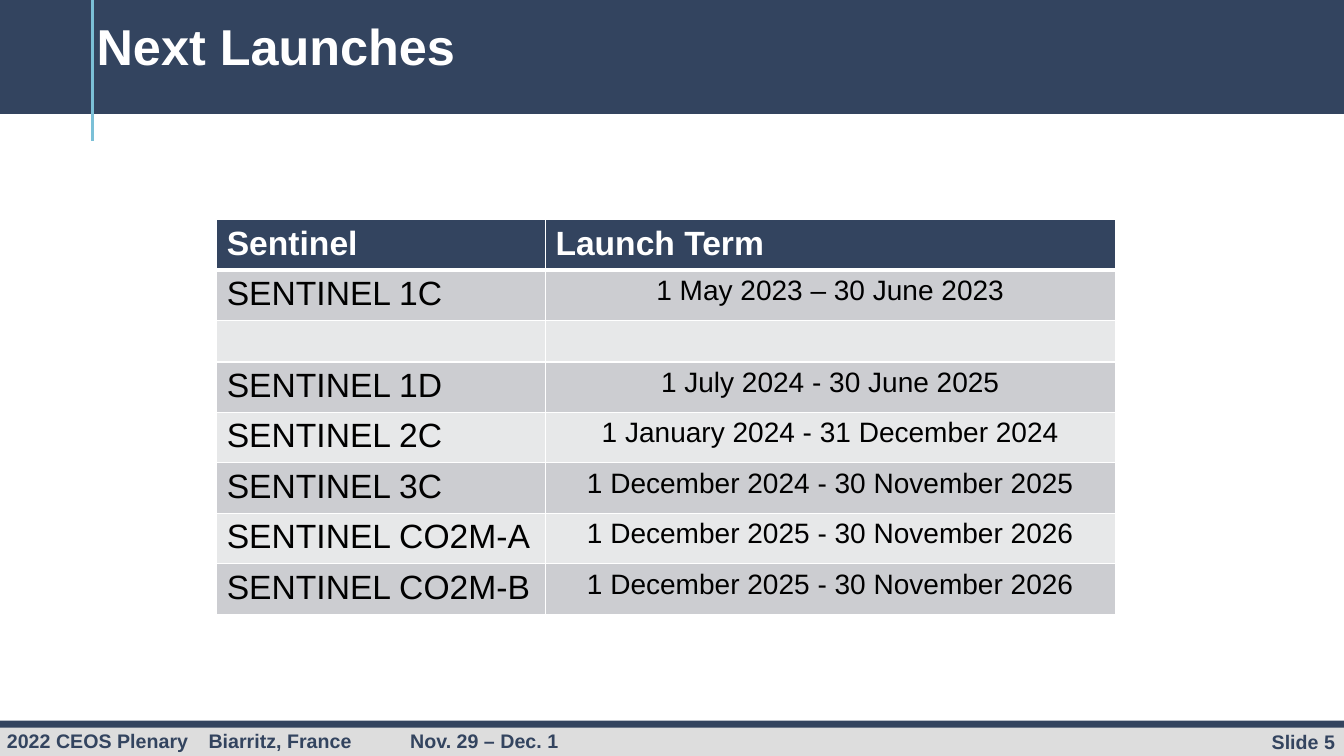
"""Build the Next Launches slide with its header, launch table and footer."""
from dataclasses import dataclass

from lxml import etree
from pptx import Presentation
from pptx import util as u
from pptx.dml import color
from pptx.enum import shapes, text
from pptx.oxml import ns

PX = 9144
COLORS = {
    "navy": "33445F",
    "grey": "DDDDDD",
    "sky": "7BC0D7",
    "white": "FFFFFF",
    "black": "000000",
    "dark_band": "CCCDD1",
    "light_band": "E7E8E9",
}
LEFT, CENTER, RIGHT = text.PP_ALIGN.LEFT, text.PP_ALIGN.CENTER, text.PP_ALIGN.RIGHT


@dataclass(frozen=True)
class Bar:
    """A plain filled strip."""
    area: tuple[int, int, int, int]
    fill: str


@dataclass(frozen=True)
class Label:
    """A line of text with its look."""
    words: str
    size: int
    color: str
    bold: bool = True
    align: text.PP_ALIGN = LEFT


@dataclass(frozen=True)
class Caption:
    """A text box that holds one label."""
    area: tuple[int, int, int, int]
    label: Label
    anchor: text.MSO_ANCHOR = text.MSO_ANCHOR.TOP
    bottom: int = 5
    tabs: tuple[int, ...] = ()


BARS = (
    Bar((0, 0, 1333, 113), "navy"),
    Bar((0, 719, 1334, 31), "grey"),
    Bar((0, 715, 1334, 7), "navy"),
)
CAPTIONS = (
    Caption((86, -11, 1150, 86), Label("Next Launches", 36, "white"),
            text.MSO_ANCHOR.BOTTOM, 0),
    Caption((-3, 718, 705, 128),
            Label("2022 CEOS Plenary\tBiarritz, France\tNov. 29 – Dec. 1", 14, "navy"),
            tabs=(200, 400)),
    Caption((1123, 719, 211, 34), Label("Slide 5", 14, "navy", align=RIGHT)),
)
LAUNCHES = (
    ("SENTINEL 1C", "1 May 2023 – 30 June 2023"),
    ("", ""),
    ("SENTINEL 1D", "1 July 2024 - 30 June 2025"),
    ("SENTINEL 2C", "1 January 2024 - 31 December 2024"),
    ("SENTINEL 3C", "1 December 2024 - 30 November 2025"),
    ("SENTINEL CO2M-A", "1 December 2025 - 30 November 2026"),
    ("SENTINEL CO2M-B", "1 December 2025 - 30 November 2026"),
)
HEADINGS = ("Sentinel", "Launch Term")
COLUMNS = (326, 565)
ROW_HEIGHT = 41


def px(*lengths: int) -> list[int]:
    """Turn px lengths into EMU."""
    return [length * PX for length in lengths]


def rgb(name: str) -> color.RGBColor:
    """Look up a named colour."""
    return color.RGBColor.from_string(COLORS[name])


def write(para, label: Label) -> None:
    """Put a label into a paragraph."""
    para.alignment = label.align
    span = para.add_run()
    span.text = label.words
    formats = {"name": "Arial", "size": u.Pt(label.size), "bold": label.bold}
    for key, value in formats.items():
        setattr(span.font, key, value)
    span.font.color.rgb = rgb(label.color)


def draw_bar(page, bar: Bar) -> None:
    """Draw a filled strip."""
    box = page.shapes.add_shape(shapes.MSO_SHAPE.RECTANGLE, *px(*bar.area))
    box.shadow.inherit = False
    box.fill.solid()
    box.fill.fore_color.rgb = rgb(bar.fill)
    box.line.fill.background()


def draw_rule(page) -> None:
    """Draw the vertical accent line beside the title."""
    rule = page.shapes.add_connector(shapes.MSO_CONNECTOR.STRAIGHT, *px(92, 0, 92, 140))
    rule.line.color.rgb = rgb("sky")
    rule.line.width = u.Pt(2.25)
    etree.SubElement(rule._element.spPr, ns.qn("a:effectLst"))


def draw_caption(page, caption: Caption) -> None:
    """Draw a text box with one label."""
    frame = page.shapes.add_textbox(*px(*caption.area)).text_frame
    formats = {
        "word_wrap": True,
        "vertical_anchor": caption.anchor,
        "margin_bottom": caption.bottom * PX,
    }
    for key, value in formats.items():
        setattr(frame, key, value)
    para = frame.paragraphs[0]
    if caption.tabs:
        stops = etree.SubElement(para._p.get_or_add_pPr(), ns.qn("a:tabLst"))
        for stop in px(*caption.tabs):
            etree.SubElement(stops, ns.qn("a:tab"), pos=str(stop), algn="l")
    write(para, caption.label)


def fill_cell(cell, label: Label, fill: str, row: int) -> None:
    """Give a cell its white borders, fill and text."""
    props = cell._tc.get_or_add_tcPr()
    widths = {"L": 1, "R": 1, "T": 3 if row == 1 else 1, "B": 3 if row == 0 else 1}
    for side, width in widths.items():
        edge = etree.SubElement(props, ns.qn(f"a:ln{side}"), w=str(u.Pt(width)))
        paint = etree.SubElement(edge, ns.qn("a:solidFill"))
        etree.SubElement(paint, ns.qn("a:srgbClr"), val=COLORS["white"])
    cell.fill.solid()
    cell.fill.fore_color.rgb = rgb(fill)
    if label.words:
        write(cell.text_frame.paragraphs[0], label)


def draw_table(page) -> None:
    """Draw the launch table."""
    rows = (HEADINGS, *LAUNCHES)
    area = px(215, 218, sum(COLUMNS), ROW_HEIGHT * len(rows))
    table = page.shapes.add_table(len(rows), len(COLUMNS), *area).table
    for column, width in zip(table.columns, px(*COLUMNS)):
        column.width = width
    for row, (name, term) in enumerate(rows):
        if row == 0:
            fill = "navy"
            labels = [Label(name, 24, "white"), Label(term, 24, "white")]
        else:
            fill = "dark_band" if row % 2 else "light_band"
            labels = [Label(name, 24, "black", False),
                      Label(term, 20, "black", False, CENTER)]
        for column, label in enumerate(labels):
            fill_cell(table.cell(row, column), label, fill, row)


def main() -> None:
    """Assemble and save the deck."""
    deck = Presentation()
    deck.slide_width, deck.slide_height = px(1333, 750)
    page = deck.slides.add_slide(deck.slide_layouts[6])
    for bar in BARS:
        draw_bar(page, bar)
    draw_rule(page)
    for caption in CAPTIONS:
        draw_caption(page, caption)
    draw_table(page)
    deck.save("out.pptx")


if __name__ == "__main__":
    main()
